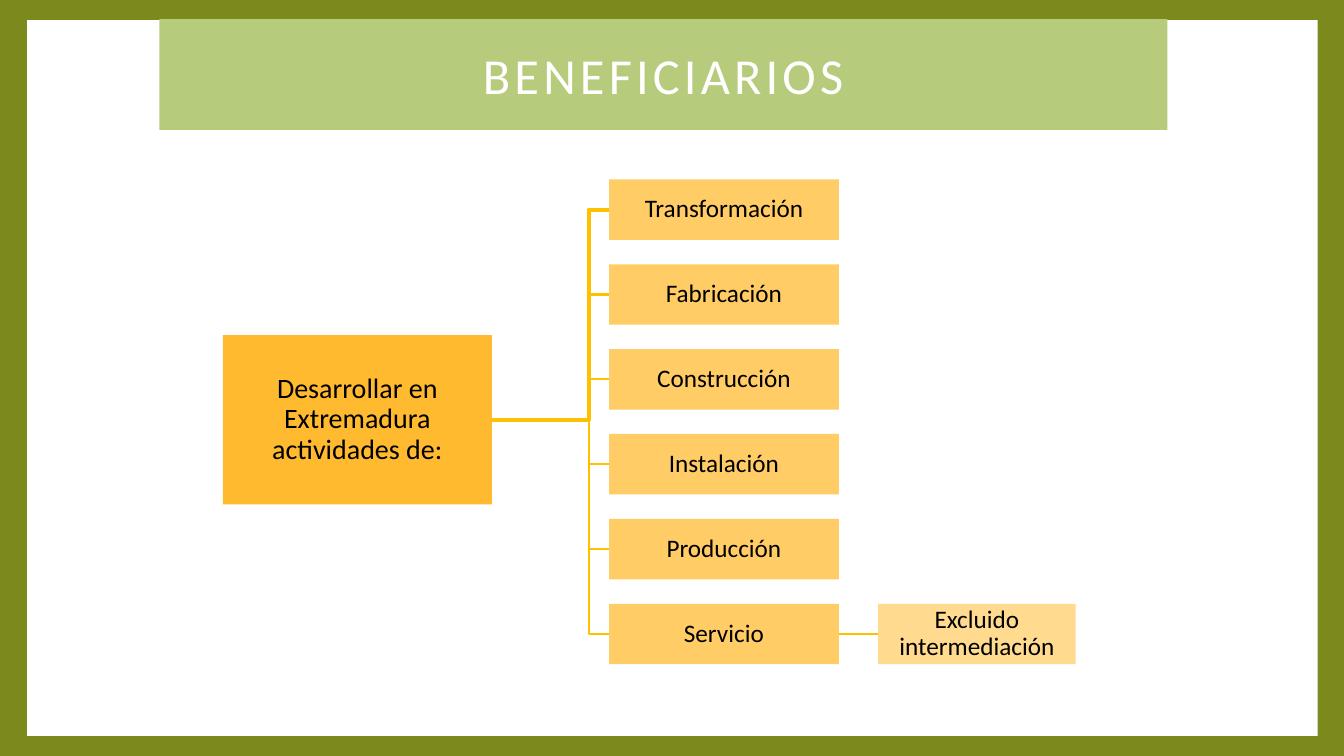
from pptx import Presentation
from pptx import util as u
from pptx.dml.color import RGBColor
from pptx.enum import shapes, text

OLIVE = RGBColor(0x7C, 0x89, 0x1D)
LEAF = RGBColor(0xB6, 0xCB, 0x7B)
WHITE = RGBColor(0xFF, 0xFF, 0xFF)
BLACK = RGBColor(0x00, 0x00, 0x00)
GOLD = RGBColor(0xFF, 0xC0, 0x00)
ROOT_FILL = RGBColor(0xFF, 0xBA, 0x2F)
BRANCH_FILL = RGBColor(0xFF, 0xCC, 0x66)
LEAF_FILL = RGBColor(0xFF, 0xDA, 0x8F)

FONT = "Calibri"
ACTIVITIES = ["Transformación", "Fabricación", "Construcción",
              "Instalación", "Producción", "Servicio"]


def add_panel(page, box, fill):
    """Add a plain rectangle; box is left, top, width, height in inches."""
    panel = page.shapes.add_shape(shapes.MSO_SHAPE.RECTANGLE, *map(u.Inches, box))
    panel.shadow.inherit = False
    panel.fill.solid()
    panel.fill.fore_color.rgb = fill
    panel.line.fill.background()
    return panel


def write(panel, wording, size, color, inset):
    frame = panel.text_frame
    frame.word_wrap = True
    frame.vertical_anchor = text.MSO_ANCHOR.MIDDLE
    frame.margin_left = frame.margin_right = u.Inches(inset)
    frame.margin_top = frame.margin_bottom = u.Inches(inset / 2)
    frame.text = wording
    para = frame.paragraphs[0]
    para.alignment = text.PP_ALIGN.CENTER
    span = para.runs[0]
    span.font.name = FONT
    span.font.size = u.Pt(size)
    span.font.color.rgb = color
    return para


def add_node(page, box, wording, fill, size=18):
    para = write(add_panel(page, box, fill), wording, size, BLACK, 0.02)
    para.line_spacing = 0.9


def add_link(page, points, width=1.5):
    """Draw an open line through the points, given in inches."""
    start, *rest = [(u.Inches(x), u.Inches(y)) for x, y in points]
    builder = page.shapes.build_freeform(*start)
    builder.add_line_segments(rest, close=False)
    link = builder.convert_to_shape()
    link.shadow.inherit = False
    link.fill.background()
    link.line.color.rgb = GOLD
    link.line.width = u.Pt(width)


def add_title(page, box):
    para = write(add_panel(page, box, LEAF), "BENEFICIARIOS", 36, WHITE, 0.1)
    para.runs[0]._r.get_or_add_rPr().set("spc", "300")


def add_tree(page, box):
    left, top, width, height = box
    node_height = 0.6
    step = (height - node_height) / (len(ACTIVITIES) - 1)
    root_width, root_height = 2.67, 1.68
    branch_width, leaf_width = 2.28, 1.96
    middle = top + height / 2 - 0.02
    root_right = left + root_width
    branch_left = left + 3.83
    branch_right = branch_left + branch_width
    leaf_left = left + width - leaf_width
    trunk = branch_left - 0.2
    tops = [top + row * step for row in range(len(ACTIVITIES))]
    centers = [y + node_height / 2 for y in tops]

    add_link(page, [(branch_right, centers[-1]), (leaf_left, centers[-1])])
    for row in reversed(range(len(ACTIVITIES))):
        add_link(page, [(root_right, middle), (trunk, middle),
                        (trunk, centers[row]), (branch_left, centers[row])],
                 1.5 if row else 3)

    add_node(page, (left, middle - root_height / 2, root_width, root_height),
             "Desarrollar en Extremadura actividades de:", ROOT_FILL, 20)
    for wording, y in zip(ACTIVITIES, tops):
        add_node(page, (branch_left, y, branch_width, node_height),
                 wording, BRANCH_FILL)
    add_node(page, (leaf_left, tops[-1], leaf_width, node_height),
             "Excluido intermediación", LEAF_FILL)


def main():
    deck = Presentation()
    deck.slide_width, deck.slide_height = u.Inches(13.33), u.Inches(7.5)
    page = deck.slides.add_slide(deck.slide_layouts[6])
    page.background.fill.solid()
    page.background.fill.fore_color.rgb = OLIVE
    add_panel(page, (0.27, 0.2, 12.8, 7.1), WHITE)
    add_title(page, (1.58, 0.19, 10, 1.1))
    add_tree(page, (2.21, 1.78, 8.46, 4.81))
    deck.save("out.pptx")


if __name__ == "__main__":
    main()
